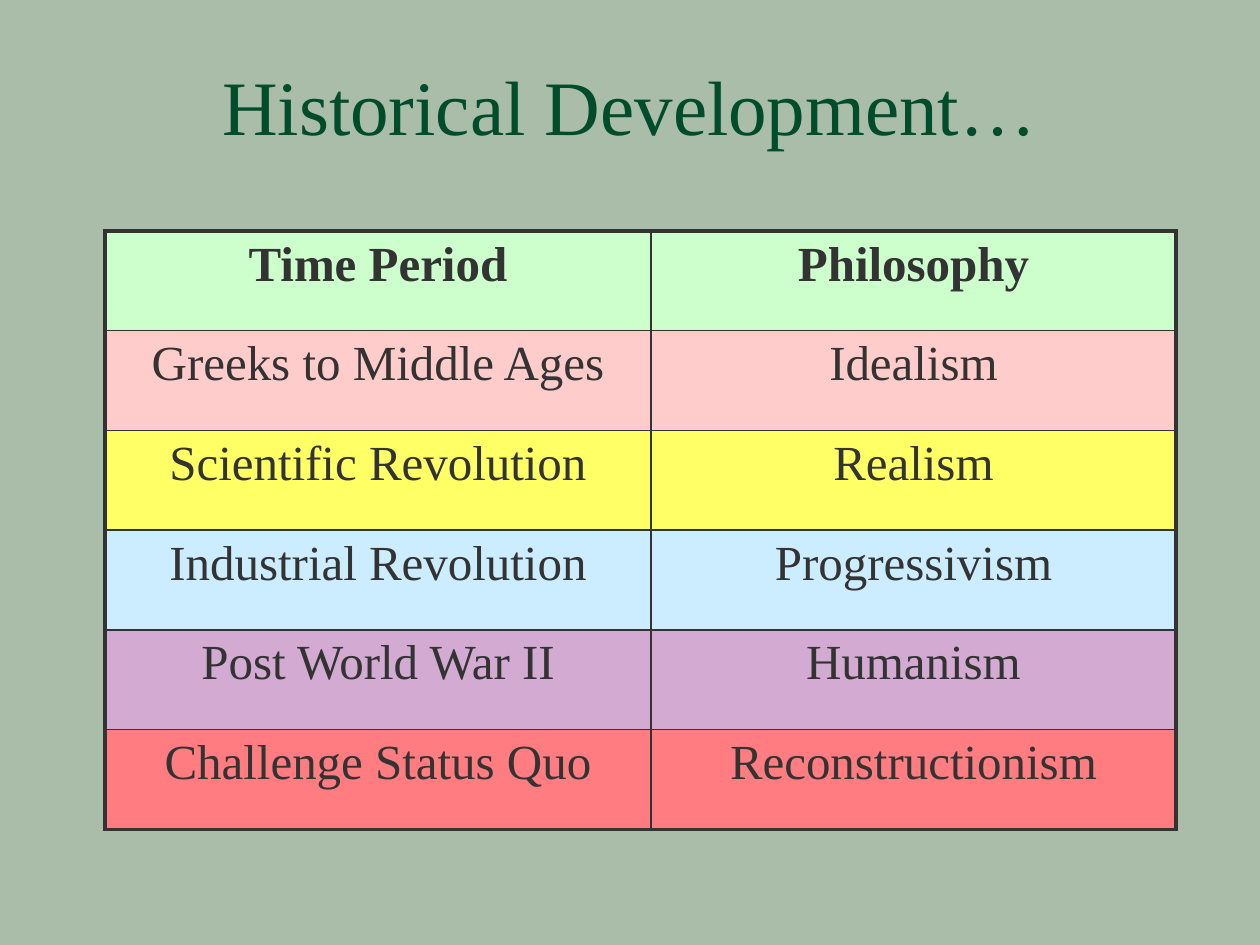
from lxml.etree import SubElement
from pptx import Presentation
from pptx.dml.color import RGBColor
from pptx.enum.text import MSO_ANCHOR, MSO_AUTO_SIZE, PP_ALIGN
from pptx.oxml.ns import qn
from pptx.util import Pt

FONT = "Times New Roman"
INK = "333333"
OUTER, INNER = 2.25, 1
ROW_HEIGHT = 57
COLUMN_WIDTHS = (312, 300)
PERIODS = [
    ("Time Period", "Philosophy", "CCFFCC"),
    ("Greeks to Middle Ages", "Idealism", "FFCCCC"),
    ("Scientific Revolution", "Realism", "FFFF66"),
    ("Industrial Revolution", "Progressivism", "CCECFF"),
    ("Post World War II", "Humanism", "D2AAD2"),
    ("Challenge Status Quo", "Reconstructionism", "FF7C80"),
]


def rgb(value):
    return RGBColor.from_string(value)


def fill_solid(fill, value):
    fill.solid()
    fill.fore_color.rgb = rgb(value)


def apply(target, values):
    for name, value in values.items():
        setattr(target, name, value)


def write(frame, text, size, color, bold=False):
    frame.text = text
    paragraph = frame.paragraphs[0]
    paragraph.alignment = PP_ALIGN.CENTER
    font = paragraph.runs[0].font
    apply(font, {"name": FONT, "size": Pt(size), "bold": bold})
    font.color.rgb = rgb(color)


def add_title(slide, text):
    title = slide.shapes.title
    apply(title, {"left": Pt(54), "top": Pt(30), "width": Pt(612), "height": Pt(60)})
    write(title.text_frame, text, 44, "004C2B")
    apply(title.text_frame, {
        "vertical_anchor": MSO_ANCHOR.BOTTOM,
        "auto_size": MSO_AUTO_SIZE.NONE,
        "word_wrap": True,
    })


def set_borders(cell, widths):
    properties = cell._tc.get_or_add_tcPr()
    for side, width in widths.items():
        line = SubElement(properties, qn(f"a:ln{side}"), w=str(Pt(width)))
        solid = SubElement(line, qn("a:solidFill"))
        SubElement(solid, qn("a:srgbClr"), val=INK)


def add_period_table(slide, left, top):
    row_count, column_count = len(PERIODS), len(COLUMN_WIDTHS)
    table = slide.shapes.add_table(
        row_count, column_count, Pt(left), Pt(top),
        Pt(sum(COLUMN_WIDTHS)), Pt(ROW_HEIGHT * row_count),
    ).table
    apply(table, {"first_row": False, "horz_banding": False})
    for column, width in zip(table.columns, COLUMN_WIDTHS):
        column.width = Pt(width)
    for r, (period, philosophy, color) in enumerate(PERIODS):
        table.rows[r].height = Pt(ROW_HEIGHT)
        for c, text in enumerate((period, philosophy)):
            cell = table.cell(r, c)
            write(cell.text_frame, text, 28, INK, bold=r == 0)
            set_borders(cell, {
                "L": OUTER if c == 0 else INNER,
                "R": OUTER if c == column_count - 1 else INNER,
                "T": OUTER if r == 0 else INNER,
                "B": OUTER if r == row_count - 1 else INNER,
            })
            fill_solid(cell.fill, color)


def main():
    deck = Presentation()
    apply(deck, {"slide_width": Pt(720), "slide_height": Pt(540)})
    slide = deck.slides.add_slide(deck.slide_layouts[5])
    fill_solid(slide.background.fill, "A9BDA9")
    add_title(slide, "Historical Development…")
    add_period_table(slide, 60, 132)
    deck.save("out.pptx")


if __name__ == "__main__":
    main()
